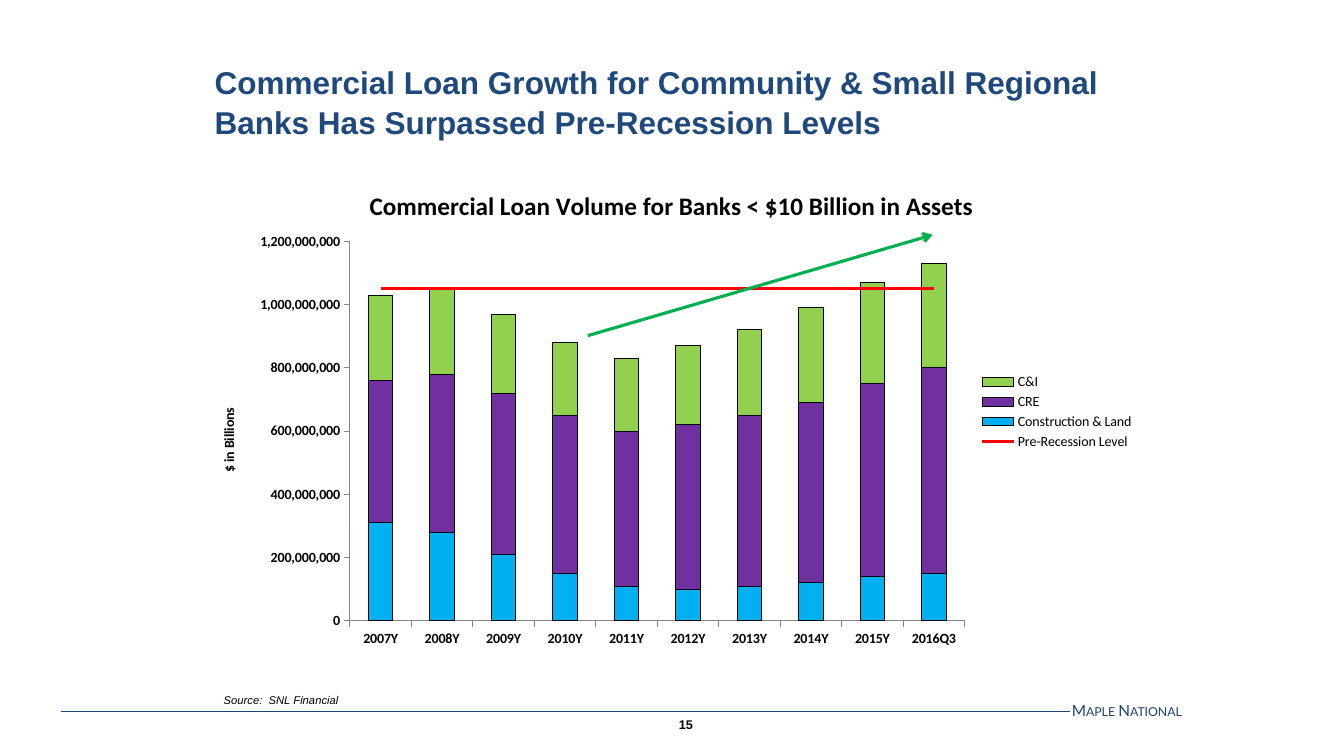
from lxml.etree import SubElement
from pptx import Presentation
from pptx.chart.data import CategoryChartData
from pptx.dml.color import RGBColor
from pptx.enum.chart import (XL_CHART_TYPE, XL_LEGEND_POSITION, XL_MARKER_STYLE,
                             XL_TICK_MARK)
from pptx.enum.shapes import MSO_CONNECTOR
from pptx.enum.text import MSO_ANCHOR, PP_ALIGN
from pptx.oxml import parse_xml
from pptx.oxml.ns import nsdecls, qn
from pptx.util import Inches, Pt

COLORS = {
    "title": "1F497D", "footer": "1C4372", "text": "000000", "axis": "868686",
    "construction": "00B0F0", "cre": "7030A0", "c_and_i": "92D050",
    "pre_recession": "FF0000", "growth": "00B050",
}
PERIODS = [f"{year}Y" for year in range(2007, 2016)] + ["2016Q3"]
UNIT = 10_000_000
LOANS = [
    ("Construction & Land", "construction", [31, 28, 21, 15, 11, 10, 11, 12, 14, 15]),
    ("CRE", "cre", [45, 50, 51, 50, 49, 52, 54, 57, 61, 65]),
    ("C&I", "c_and_i", [27, 27, 25, 23, 23, 25, 27, 30, 32, 33]),
]
PRE_RECESSION = ("Pre-Recession Level", "pre_recession", [105] * len(PERIODS))


def color(name):
    return RGBColor.from_string(COLORS[name])


def add_text(page, place, text, size, font="Arial", ink="text", bold=False,
             italic=False, align=PP_ALIGN.LEFT, anchor=MSO_ANCHOR.MIDDLE):
    """Add a one-paragraph text box and return its frame and run."""
    box = page.shapes.add_textbox(*map(Inches, place))
    frame = box.text_frame
    frame.word_wrap = True
    frame.vertical_anchor = anchor
    para = frame.paragraphs[0]
    para.alignment = align
    span = para.add_run()
    span.text = text
    span.font.name = font
    span.font.size = Pt(size)
    span.font.bold = bold
    span.font.italic = italic
    span.font.color.rgb = color(ink)
    return frame, span


def add_line(page, start, end, ink, width, arrow=False):
    line = page.shapes.add_connector(MSO_CONNECTOR.STRAIGHT,
                                     *map(Inches, (*start, *end)))
    line.line.color.rgb = color(ink)
    line.line.width = Pt(width)
    if arrow:
        SubElement(line.line._get_or_add_ln(), qn("a:tailEnd"), type="arrow")
    SubElement(line._element.spPr, qn("a:effectLst"))


def add_footer(page):
    add_line(page, (10.61, 7.06), (0.61, 7.06), "footer", 1)
    frame, span = add_text(page, (10.63, 6.92, 2.72, 0.22), "Maple National", 11,
                           font="Lato", ink="footer", anchor=MSO_ANCHOR.TOP)
    frame.margin_left = frame.margin_right = frame.margin_bottom = 0
    frame.margin_top = Inches(0.04)
    span._r.get_or_add_rPr().set("cap", "small")
    add_text(page, (6.34, 7.06, 0.63, 0.25), "15", 9, bold=True, align=PP_ALIGN.RIGHT)


def set_title(owner, text, size):
    span = owner.text_frame.paragraphs[0].add_run()
    span.text = text
    span.font.size = Pt(size)
    span.font.bold = True


def style_axis(axis):
    axis.has_major_gridlines = False
    axis.major_tick_mark = XL_TICK_MARK.OUTSIDE
    axis.minor_tick_mark = XL_TICK_MARK.NONE
    axis.tick_labels.font.bold = True
    axis.tick_labels.font.size = Pt(10)
    axis.format.line.color.rgb = color("axis")
    axis.format.line.width = Pt(0.75)


def move_last_series_to_line(chart):
    """Draw the last column series as a line on the same axes."""
    columns = chart.plots[0]._element
    series = columns.findall(qn("c:ser"))[-1]
    for setting in series.findall(qn("c:invertIfNegative")):
        series.remove(setting)
    lines = parse_xml(f'<c:lineChart {nsdecls("c")}><c:grouping val="standard"/>'
                      '<c:varyColors val="0"/><c:marker val="1"/></c:lineChart>')
    lines.insert(2, series)
    for axis_id in columns.findall(qn("c:axId")):
        SubElement(lines, qn("c:axId"), val=axis_id.get("val"))
    columns.addnext(lines)


def place_plot(chart, left, top, width, height):
    """Fix the inner plot area, in fractions of the chart."""
    area = chart.plots[0]._element.getparent()
    for old in area.findall(qn("c:layout")):
        area.remove(old)
    layout = parse_xml(f'<c:layout {nsdecls("c")}><c:manualLayout/></c:layout>')
    settings = {"layoutTarget": "inner", "xMode": "edge", "yMode": "edge",
                "x": left, "y": top, "w": width, "h": height}
    for tag, value in settings.items():
        SubElement(layout[0], qn(f"c:{tag}"), val=str(value))
    area.insert(0, layout)


def add_loan_chart(page):
    data = CategoryChartData(number_format="#,##0")
    data.categories = PERIODS
    for name, _, values in LOANS + [PRE_RECESSION]:
        data.add_series(name, [value * UNIT for value in values])
    place = map(Inches, (1.97, 1.67, 9.38, 4.83))
    chart = page.shapes.add_chart(XL_CHART_TYPE.COLUMN_STACKED, *place, data).chart
    chart.font.name = "Calibri"
    chart.font.size = Pt(10)
    chart.font.color.rgb = color("text")
    chart.has_title = True
    set_title(chart.chart_title, "Commercial Loan Volume for Banks < $10 Billion in Assets", 18)
    chart.has_legend = True
    chart.legend.position = XL_LEGEND_POSITION.RIGHT
    chart.legend.include_in_layout = False

    style_axis(chart.category_axis)
    style_axis(chart.value_axis)
    chart.value_axis.minimum_scale = 0
    chart.value_axis.maximum_scale = 120 * UNIT
    chart.value_axis.major_unit = 20 * UNIT
    chart.value_axis.tick_labels.number_format = "#,##0"
    chart.value_axis.tick_labels.number_format_is_linked = False
    set_title(chart.value_axis.axis_title, "$ in Billions", 10)

    move_last_series_to_line(chart)
    columns, lines = chart.plots
    columns.gap_width = 150
    columns.overlap = 100
    columns.vary_by_categories = False
    for series, (_, fill, _) in zip(columns.series, LOANS):
        series.invert_if_negative = False
        series.format.fill.solid()
        series.format.fill.fore_color.rgb = color(fill)
        series.format.line.color.rgb = color("text")
        series.format.line.width = Pt(0.75)
    level = lines.series[0]
    level.smooth = False
    level.marker.style = XL_MARKER_STYLE.NONE
    level.format.line.color.rgb = color(PRE_RECESSION[1])
    level.format.line.width = Pt(2.25)
    place_plot(chart, 0.16, 0.15, 0.65, 0.78)


def main():
    deck = Presentation()
    deck.slide_width = Inches(13.33)
    deck.slide_height = Inches(7.5)
    page = deck.slides.add_slide(deck.slide_layouts[6])
    add_footer(page)
    frame, _ = add_text(page, (2.03, 0.75, 9, 0.5),
                        "Commercial Loan Growth for Community & Small Regional "
                        "Banks Has Surpassed Pre-Recession Levels",
                        22.5, ink="title", bold=True)
    frame.paragraphs[0].line_spacing = 1.05
    add_text(page, (2.12, 6.69, 9.02, 0.37), "Source:  SNL Financial", 8,
             italic=True, anchor=MSO_ANCHOR.BOTTOM)
    add_loan_chart(page)
    add_line(page, (5.83, 3.33), (9.25, 2.33), "growth", 2.25, arrow=True)
    deck.save("out.pptx")


if __name__ == "__main__":
    main()
